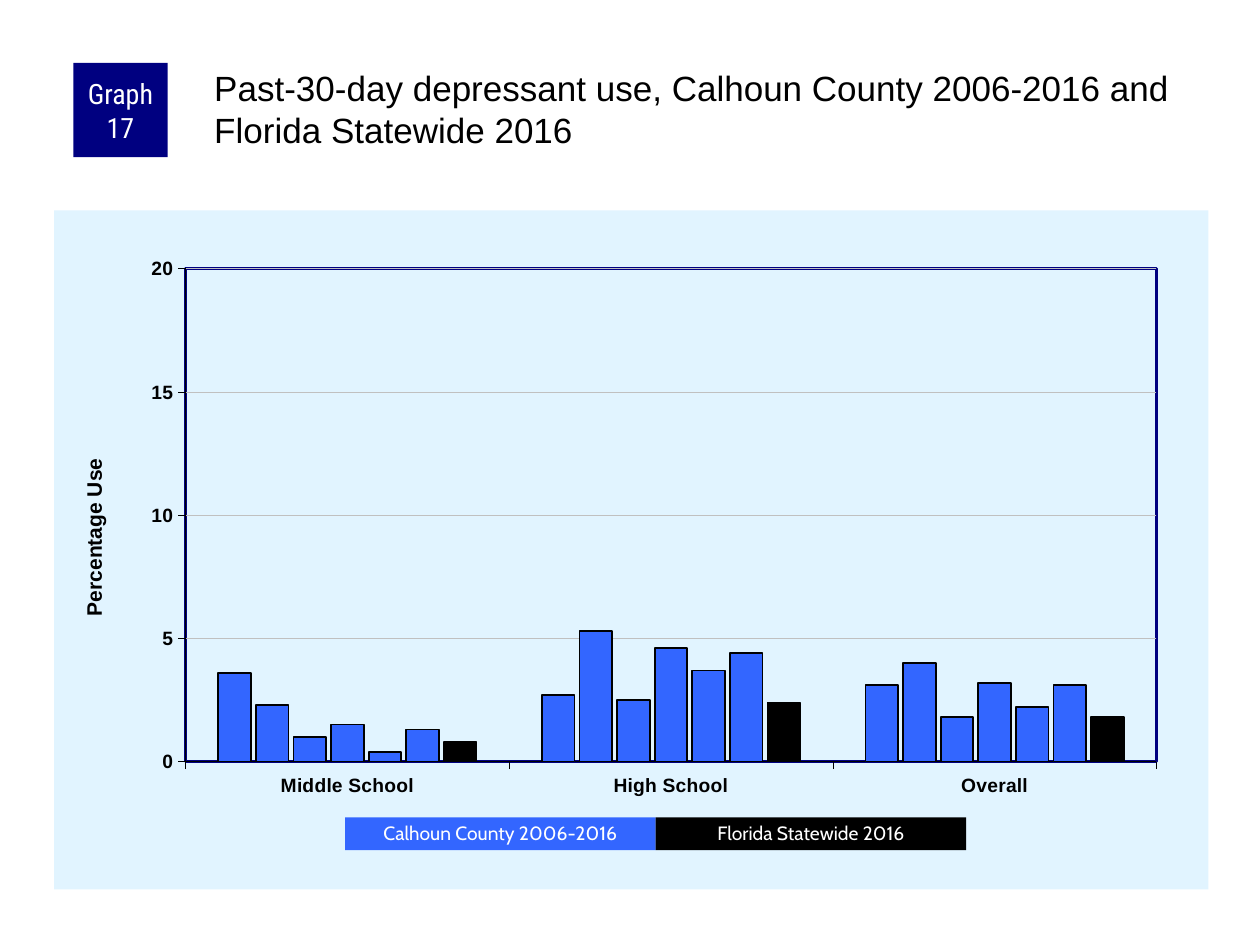
from dataclasses import dataclass

from pptx import Presentation
from pptx.chart.data import CategoryChartData as ChartData
from pptx.dml.color import RGBColor as Rgb
from pptx.enum.chart import XL_CHART_TYPE as Kind, XL_TICK_MARK as Tick
from pptx.enum.shapes import MSO_SHAPE as Form
from pptx.enum.text import MSO_ANCHOR as Anchor, PP_ALIGN as Align
from pptx.oxml import parse_xml
from pptx.oxml.ns import nsdecls, qn
from pptx.util import Cm, Pt


@dataclass(frozen=True)
class Theme:
    navy: str = "000080"
    blue: str = "3366FF"
    pale: str = "E1F4FF"
    grid: str = "C0C0C0"
    black: str = "000000"
    white: str = "FFFFFF"
    body: str = "Arial"
    badge: str = "Roboto Condensed"
    key: str = "Cabin"
    head_pt: int = 20
    badge_pt: int = 16
    title_pt: int = 12
    label_pt: int = 11


T = Theme()
GROUPS = ["Middle School", "High School", "Overall"]
COUNTY = [(3.6, 2.7, 3.1), (2.3, 5.3, 4), (1, 2.5, 1.8),
          (1.5, 4.6, 3.2), (0.4, 3.7, 2.2), (1.3, 4.4, 3.1)]
STATE = (0.8, 2.4, 1.8)


def style(font, name, size, color, bold=False):
    font.name, font.size, font.bold = name, Pt(size), bold
    font.color.rgb = Rgb.from_string(color)


def paint(fill, color):
    fill.solid()
    fill.fore_color.rgb = Rgb.from_string(color)


def draw(line, color, width):
    line.color.rgb = Rgb.from_string(color)
    line.width = Pt(width)


def add_box(slide, area, text, color, font, size):
    box = slide.shapes.add_shape(Form.RECTANGLE, *map(Cm, area))
    box.shadow.inherit = False
    paint(box.fill, color)
    box.line.fill.background()
    frame = box.text_frame
    frame.text = text
    frame.word_wrap = True
    frame.vertical_anchor = Anchor.MIDDLE
    frame.margin_left = frame.margin_right = Cm(0.13)
    frame.margin_top = frame.margin_bottom = 0
    par = frame.paragraphs[0]
    par.alignment = Align.CENTER
    style(par.runs[0].font, font, size, T.white)
    return par


def add_head(slide, area, text):
    frame = slide.shapes.add_textbox(*map(Cm, area)).text_frame
    frame.text = text
    frame.word_wrap = True
    frame.margin_left = frame.margin_top = Cm(0.08)
    frame.margin_right = frame.margin_bottom = 0
    style(frame.paragraphs[0].runs[0].font, T.body, T.head_pt, T.black)


def place(node, index, x, y, size=None):
    """Give a chart part a manual layout, in fractions of the chart."""
    for old in node.findall(qn("c:layout")):
        node.remove(old)
    vals = {"x": x, "y": y}
    tags = '<c:xMode val="edge"/><c:yMode val="edge"/>'
    if size:
        tags = '<c:layoutTarget val="inner"/>' + tags
        vals.update(zip("wh", size))
    tags += "".join(f'<c:{key} val="{val}"/>' for key, val in vals.items())
    node.insert(index, parse_xml(
        f'<c:layout {nsdecls("c")}><c:manualLayout>{tags}'
        '</c:manualLayout></c:layout>'))


def make_props(fill, line):
    return parse_xml(
        f'<c:spPr {nsdecls("c", "a")}>{fill}{line}</c:spPr>')


def solid(color):
    return f'<a:solidFill><a:srgbClr val="{color}"/></a:solidFill>'


def set_axes(chart):
    for axis in (chart.category_axis, chart.value_axis):
        axis.major_tick_mark = Tick.OUTSIDE
        axis.minor_tick_mark = Tick.NONE
        style(axis.tick_labels.font, T.body, T.label_pt, T.black, True)
        draw(axis.format.line, T.black, 0.25)
    axis = chart.value_axis
    axis.minimum_scale, axis.maximum_scale, axis.major_unit = 0, 20, 5
    axis.has_major_gridlines = True
    draw(axis.major_gridlines.format.line, T.grid, 0.25)
    axis.tick_labels.number_format = "0"
    axis.tick_labels.number_format_is_linked = False
    frame = axis.axis_title.text_frame
    frame.text = "Percentage Use"
    style(frame.paragraphs[0].runs[0].font, T.body, T.title_pt, T.black, True)
    body = frame._txBody.find(qn("a:bodyPr"))
    body.set("rot", "-5400000")
    body.set("vert", "horz")
    place(axis.axis_title._element, 1, 0.02, 0.36)


def add_bars(slide, area):
    data = ChartData()
    data.categories = GROUPS
    rows = COUNTY + [STATE]
    for num, vals in enumerate(rows, 1):
        data.add_series(f"Series {num}", vals)
    chart = slide.shapes.add_chart(
        Kind.COLUMN_CLUSTERED, *map(Cm, area), data).chart
    chart.has_title = chart.has_legend = False
    style(chart.font, T.body, 8, T.black)
    plot = chart.plots[0]
    plot.gap_width, plot.overlap = 200, -15
    plot.vary_by_categories = False
    for bars, vals in zip(plot.series, rows):
        paint(bars.format.fill, T.black if vals is STATE else T.blue)
        draw(bars.format.line, T.black, 1)
    set_axes(chart)

    root = chart._chartSpace.find(qn("c:chart"))
    root.addnext(make_props(solid(T.pale), "<a:ln><a:noFill/></a:ln>"))
    inner = root.find(qn("c:plotArea"))
    place(inner, 0, 0.114, 0.086, (0.841, 0.726))
    inner.append(make_props(
        "<a:noFill/>", f'<a:ln w="{Pt(1.5)}">{solid(T.navy)}</a:ln>'))


def add_key(slide, left, top, width, height):
    items = [("Calhoun County 2006-2016", T.blue),
             ("Florida Statewide 2016", T.black)]
    for col, (text, color) in enumerate(items):
        area = (left + col * width, top, width, height)
        par = add_box(slide, area, text, color, T.key, T.label_pt)
        par.line_spacing = 0.9


def main():
    deck = Presentation()
    deck.slide_width, deck.slide_height = Cm(25.4), Cm(19.05)
    slide = deck.slides.add_slide(deck.slide_layouts[6])
    add_bars(slide, (1.09, 4.24, 23.27, 13.69))
    add_box(slide, (1.48, 1.27, 1.9, 1.9), "Graph 17",
            T.navy, T.badge, T.badge_pt)
    add_head(slide, (4.24, 1.27, 20.12, 2.11),
             "Past-30-day depressant use, Calhoun County 2006-2016 "
             "and Florida Statewide 2016")
    add_key(slide, 6.96, 16.48, 6.26, 0.66)
    deck.save("out.pptx")


if __name__ == "__main__":
    main()
